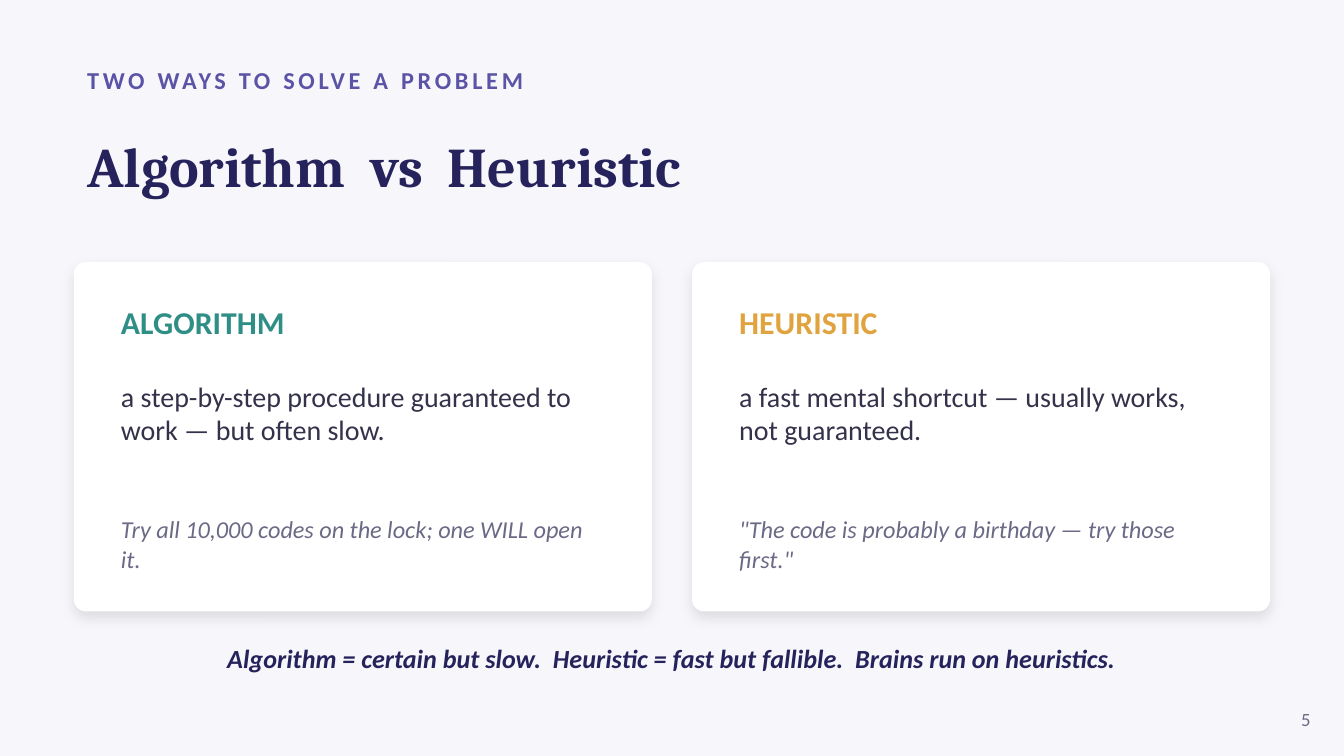
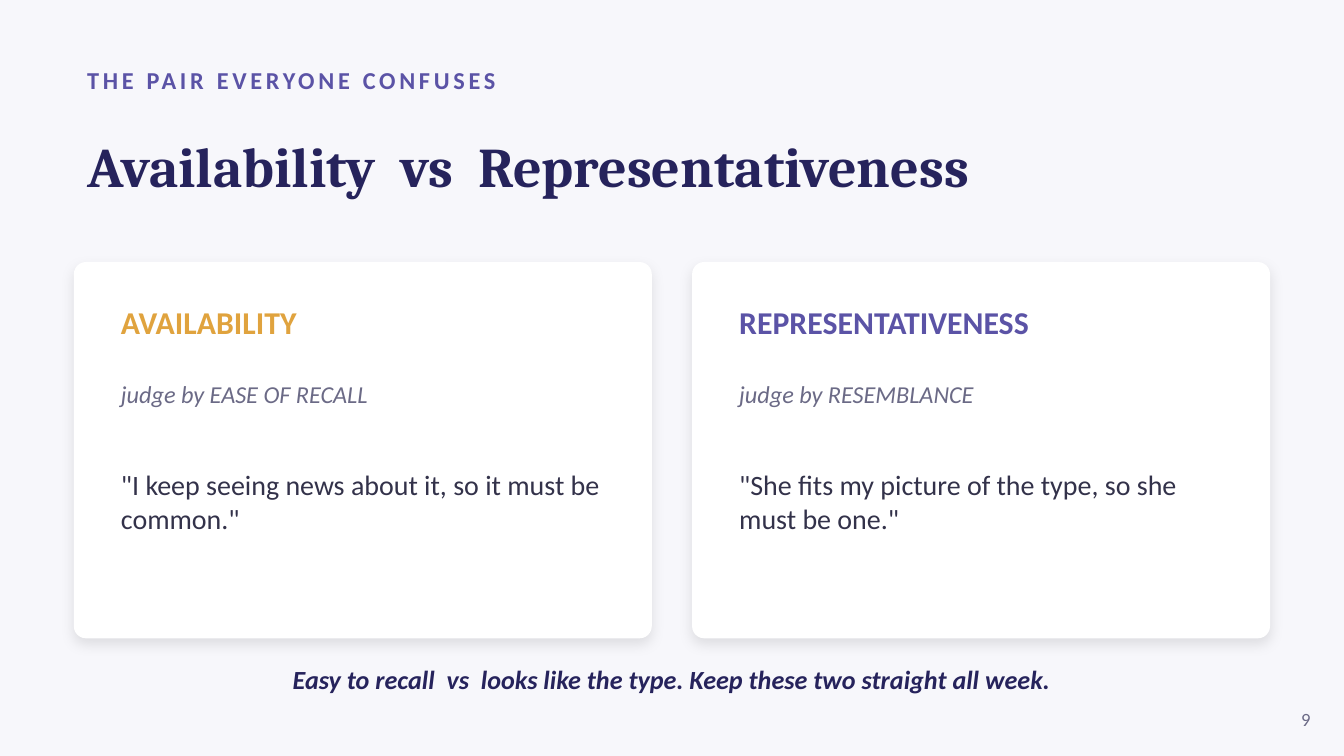
import dataclasses

import lxml.etree
import pptx
import pptx.dml.color
import pptx.enum.shapes
import pptx.enum.text
import pptx.oxml.ns
import pptx.util

Inches = pptx.util.Inches
Pt = pptx.util.Pt
ALIGN = pptx.enum.text.PP_ALIGN
ANCHOR = pptx.enum.text.MSO_ANCHOR


@dataclasses.dataclass(frozen=True)
class Theme:
    paper: str = "F7F7FB"
    card: str = "FFFFFF"
    navy: str = "26235C"
    violet: str = "5B53A6"
    teal: str = "2F8F86"
    amber: str = "E0A33E"
    ink: str = "33324A"
    muted: str = "6B6A86"
    serif: str = "Cambria"
    sans: str = "Calibri"

    @property
    def styles(self):
        return {
            "kicker": dict(size=13, color=self.violet, bold=True),
            "title": dict(size=30, color=self.navy, bold=True, name=self.serif),
            "heading": dict(size=17, bold=True),
            "definition": dict(size=15, color=self.ink),
            "aside": dict(size=13, color=self.muted, italic=True),
            "takeaway": dict(size=14, color=self.navy, bold=True, italic=True),
            "number": dict(size=10, color=self.muted),
        }


THEME = Theme()
LEFT, CARD_TOP, CARD_WIDTH, CARD_STEP = 0.55, 1.95, 4.3, 4.6
CARD_PADDING, CARD_RADIUS = 0.25, 0.09
CONTENT_WIDTH = CARD_STEP + CARD_WIDTH
LINE_HEIGHT = 1.22
TWO_CONTENT_LAYOUT = 3

COMPARISONS = [
    dict(
        kicker="TWO WAYS TO SOLVE A PROBLEM",
        title="Algorithm  vs  Heuristic",
        card_height=2.6,
        text_height=2.3,
        roles=("heading", "definition", "aside"),
        cards=[
            (THEME.teal, ("ALGORITHM",
                          "a step-by-step procedure guaranteed to work — but often slow.",
                          "Try all 10,000 codes on the lock; one WILL open it.")),
            (THEME.amber, ("HEURISTIC",
                           "a fast mental shortcut — usually works, not guaranteed.",
                           '"The code is probably a birthday — try those first."')),
        ],
        takeaway="Algorithm = certain but slow.  Heuristic = fast but fallible.  "
                 "Brains run on heuristics.",
        takeaway_top=4.7,
        number="5",
    ),
    dict(
        kicker="THE PAIR EVERYONE CONFUSES",
        title="Availability  vs  Representativeness",
        card_height=2.8,
        text_height=2.45,
        roles=("heading", "aside", "definition"),
        cards=[
            (THEME.amber, ("AVAILABILITY",
                           "judge by EASE OF RECALL",
                           '"I keep seeing news about it, so it must be common."')),
            (THEME.violet, ("REPRESENTATIVENESS",
                            "judge by RESEMBLANCE",
                            '"She fits my picture of the type, so she must be one."')),
        ],
        takeaway="Easy to recall  vs  looks like the type. "
                 "Keep these two straight all week.",
        takeaway_top=4.85,
        number="9",
    ),
]


def rgb(value):
    return pptx.dml.color.RGBColor.from_string(value)


def place(shape, left, top, width, height):
    box = dict(left=left, top=top, width=width, height=height)
    for side, length in box.items():
        setattr(shape, side, Inches(length))


def format_font(font, role, **changes):
    look = dict(name=THEME.sans, bold=False, italic=False)
    look.update(THEME.styles[role])
    look.update(changes)
    font.color.rgb = rgb(look.pop("color"))
    look["size"] = Pt(look["size"])
    for attribute, value in look.items():
        setattr(font, attribute, value)


def write_line(shape, text, role, align=ALIGN.LEFT):
    """Fill a shape with one vertically centred line and return its run."""
    frame = shape.text_frame
    settings = dict(word_wrap=True, vertical_anchor=ANCHOR.MIDDLE,
                    auto_size=pptx.enum.text.MSO_AUTO_SIZE.NONE)
    for attribute, value in settings.items():
        setattr(frame, attribute, value)
    paragraph = frame.paragraphs[0]
    paragraph.alignment = align
    run = paragraph.add_run()
    run.text = text
    format_font(run.font, role)
    return run


def add_line(slide, box, text, role, align=ALIGN.LEFT):
    label = slide.shapes.add_textbox(*map(Inches, box))
    return write_line(label, text, role, align)


def add_soft_shadow(shape):
    effects = lxml.etree.SubElement(shape.element.spPr, pptx.oxml.ns.qn("a:effectLst"))
    shadow = lxml.etree.SubElement(
        effects, pptx.oxml.ns.qn("a:outerShdw"), blurRad=str(Pt(7)),
        dist=str(Pt(3)), dir="5400000", algn="bl", rotWithShape="0")
    color = lxml.etree.SubElement(shadow, pptx.oxml.ns.qn("a:srgbClr"), val="000000")
    lxml.etree.SubElement(color, pptx.oxml.ns.qn("a:alpha"), val="10000")


def add_card(slide, body, left, height):
    """Draw a card directly behind its body text."""
    card = slide.shapes.add_shape(
        pptx.enum.shapes.MSO_SHAPE.ROUNDED_RECTANGLE,
        *map(Inches, (left, CARD_TOP, CARD_WIDTH, height)))
    card.adjustments[0] = CARD_RADIUS / height
    card.fill.solid()
    card.fill.fore_color.rgb = rgb(THEME.card)
    card.line.fill.background()
    add_soft_shadow(card)
    body.element.addprevious(card.element)


def remove_bullet(paragraph):
    properties = paragraph._p.get_or_add_pPr()
    for attribute in ("marL", "indent"):
        properties.set(attribute, "0")
    lxml.etree.SubElement(properties, pptx.oxml.ns.qn("a:buNone"))


def write_card_text(body, roles, texts, accent):
    frame = body.text_frame
    frame.word_wrap = True
    frame.auto_size = pptx.enum.text.MSO_AUTO_SIZE.NONE
    for index, (role, text) in enumerate(zip(roles, texts)):
        paragraph = frame.add_paragraph() if index else frame.paragraphs[0]
        remove_bullet(paragraph)
        paragraph.space_before = Pt(0)
        if index < len(texts) - 1:
            gap_lines = index + 1
            paragraph.space_after = Pt(
                round(gap_lines * LINE_HEIGHT * THEME.styles[role]["size"], 1))
        run = paragraph.add_run()
        run.text = text
        changes = dict(color=accent) if role == "heading" else {}
        format_font(run.font, role, **changes)


def add_comparison(deck, content):
    slide = deck.slides.add_slide(deck.slide_layouts[TWO_CONTENT_LAYOUT])
    title, *bodies = slide.placeholders
    kicker = add_line(slide, (LEFT, 0.42, 9, 0.35), content["kicker"], "kicker")
    kicker.font._element.set("spc", "200")
    place(title, LEFT, 0.78, CONTENT_WIDTH, 0.9)
    write_line(title, content["title"], "title")

    height = content["card_height"]
    for column, (body, (accent, texts)) in enumerate(zip(bodies, content["cards"])):
        left = LEFT + column * CARD_STEP
        add_card(slide, body, left, height)
        place(body, left + CARD_PADDING, CARD_TOP + CARD_PADDING,
              CARD_WIDTH - 2 * CARD_PADDING, content["text_height"])
        write_card_text(body, content["roles"], texts, accent)

    add_line(slide, (LEFT, content["takeaway_top"], CONTENT_WIDTH, 0.4),
             content["takeaway"], "takeaway", ALIGN.CENTER)
    add_line(slide, (9.35, 5.2, 0.5, 0.3), content["number"], "number", ALIGN.RIGHT)


def main():
    deck = pptx.Presentation()
    deck.slide_width = Inches(10)
    deck.slide_height = deck.slide_width * 9 // 16
    background = deck.slide_master.background.fill
    background.solid()
    background.fore_color.rgb = rgb(THEME.paper)
    for content in COMPARISONS:
        add_comparison(deck, content)
    deck.save("out.pptx")


if __name__ == "__main__":
    main()
